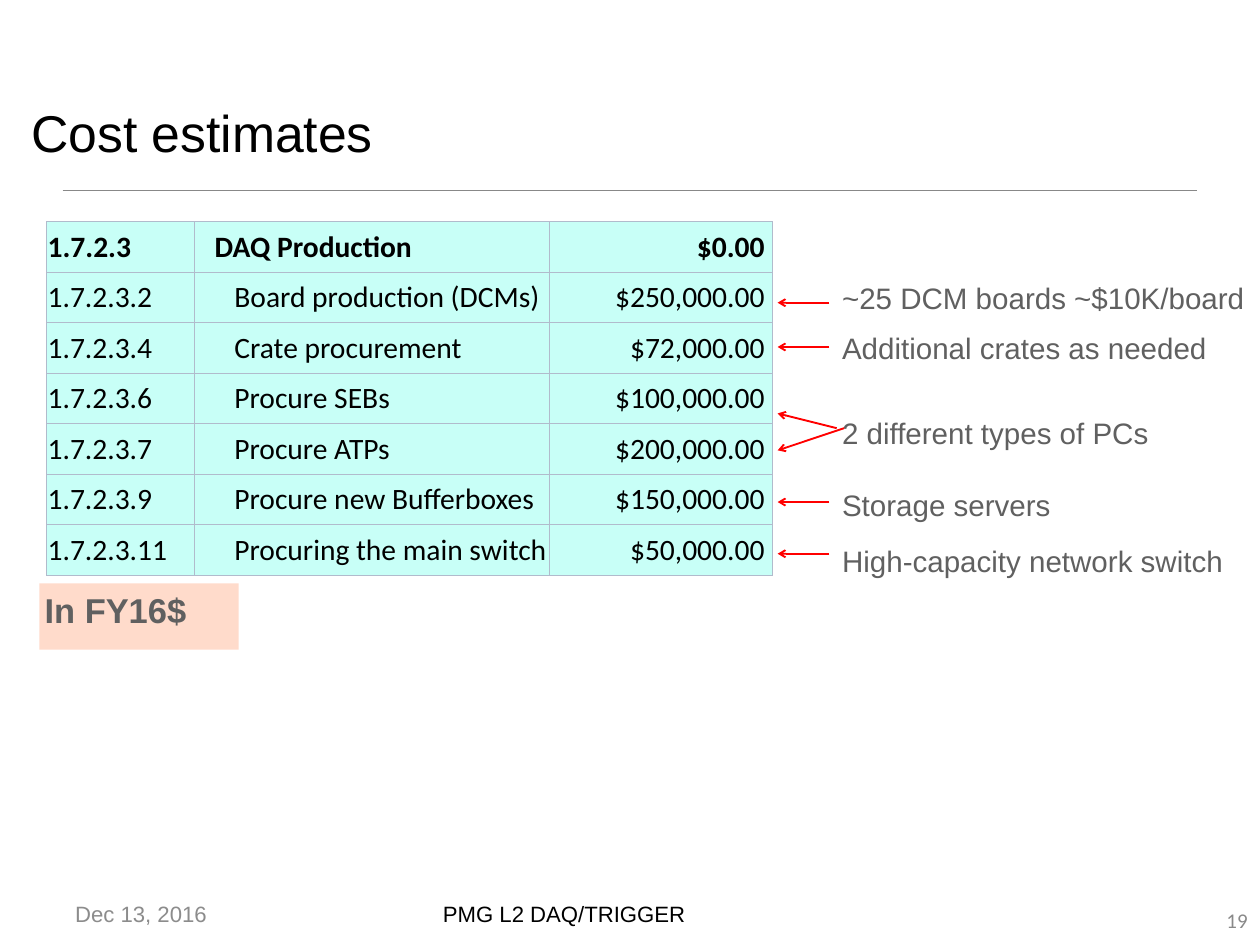
import pptx
import pptx.dml.color
import pptx.enum.shapes
import pptx.enum.text
import pptx.oxml
import pptx.oxml.ns
import pptx.util
from lxml import etree

Pt = pptx.util.Pt
ALIGN = pptx.enum.text.PP_ALIGN
ANCHOR = pptx.enum.text.MSO_ANCHOR
GREY = "606060"
BLACK = "000000"

COST_ROWS = [
    ("1.7.2.3", "DAQ Production", "$0.00"),
    ("1.7.2.3.2", "Board production (DCMs)", "$250,000.00"),
    ("1.7.2.3.4", "Crate procurement", "$72,000.00"),
    ("1.7.2.3.6", "Procure SEBs", "$100,000.00"),
    ("1.7.2.3.7", "Procure ATPs", "$200,000.00"),
    ("1.7.2.3.9", "Procure new Bufferboxes", "$150,000.00"),
    ("1.7.2.3.11", "Procuring the main switch", "$50,000.00"),
]
COLUMN_WIDTHS = [119.5, 288.7, 181.4]
ROW_HEIGHT = 41.1

# Each remark with the space before it
REMARKS = [
    ("~25 DCM boards ~$10K/board", 4),
    ("Additional crates as needed", 10),
    ("2 different types of PCs", 39),
    ("Storage servers", 28),
    ("High-capacity network switch", 16),
]

# Arrow start x, start y and end y; all end beside the table
ARROW_END_X = 632
ARROWS = [
    (680, 348, 336),
    (686, 348, 366),
    (674, 408, 408),
    (674, 450, 450),
    (674, 282, 282),
    (674, 246, 246),
]


def color(hex_value):
    return pptx.dml.color.RGBColor.from_string(hex_value)


def add_xml(parent, tag, **attributes):
    element = etree.SubElement(parent, pptx.oxml.ns.qn(tag))
    for name, value in attributes.items():
        element.set(name, value)
    return element


def place(shape, left, top, width, height):
    shape.left, shape.top = Pt(left), Pt(top)
    shape.width, shape.height = Pt(width), Pt(height)


def set_frame(text_frame, margin_x, margin_y, anchor=ANCHOR.TOP):
    text_frame.word_wrap = True
    text_frame.auto_size = pptx.enum.text.MSO_AUTO_SIZE.NONE
    text_frame.vertical_anchor = anchor
    text_frame.margin_left = text_frame.margin_right = Pt(margin_x)
    text_frame.margin_top = text_frame.margin_bottom = Pt(margin_y)


def format_paragraph(paragraph, size, hex_value, font="Arial", bold=False, align=ALIGN.LEFT):
    paragraph.alignment = align
    for run in paragraph.runs:
        run.font.name = font
        run.font.size = Pt(size)
        run.font.bold = bold
        run.font.color.rgb = color(hex_value)


def add_title(slide, text):
    title = slide.shapes.title
    place(title, 21, 35, 952, 102)
    set_frame(title.text_frame, 4.3, 4.3, ANCHOR.BOTTOM)
    title.text_frame.text = text
    format_paragraph(title.text_frame.paragraphs[0], 42, BLACK)


def add_line(slide, start, end, hex_value, width, arrow=False):
    line = slide.shapes.add_connector(
        pptx.enum.shapes.MSO_CONNECTOR.STRAIGHT, *(Pt(value) for value in start + end))
    line.line.color.rgb = color(hex_value)
    line.line.width = Pt(width)
    if arrow:
        add_xml(line.line._get_or_add_ln(), "a:tailEnd", type="arrow")
    add_xml(line._element.spPr, "a:effectLst")


def add_footer(slide, text, left, width, size, hex_value, **text_format):
    anchor = text_format.pop("anchor", ANCHOR.TOP)
    box = slide.shapes.add_textbox(Pt(left), Pt(727), Pt(width), Pt(41))
    set_frame(box.text_frame, 10, 5, anchor)
    box.text_frame.text = text
    format_paragraph(box.text_frame.paragraphs[0], size, hex_value, **text_format)


def set_borders(cell, hex_value, width):
    properties = cell._tc.get_or_add_tcPr()
    for position, side in enumerate(("a:lnL", "a:lnR", "a:lnT", "a:lnB")):
        border = add_xml(properties, side, w=str(Pt(width)))
        add_xml(add_xml(border, "a:solidFill"), "a:srgbClr", val=hex_value)
        properties.insert(position, border)


def add_cost_table(slide):
    frame = slide.shapes.add_table(
        len(COST_ROWS), len(COLUMN_WIDTHS), Pt(38), Pt(180),
        Pt(sum(COLUMN_WIDTHS)), Pt(ROW_HEIGHT * len(COST_ROWS)))
    table = frame.table
    table.first_row = table.horz_banding = False
    for column, width in zip(table.columns, COLUMN_WIDTHS):
        column.width = Pt(width)
    for row_index, texts in enumerate(COST_ROWS):
        table.rows[row_index].height = Pt(ROW_HEIGHT)
        heading = row_index == 0
        for column_index, text in enumerate(texts):
            cell = table.cell(row_index, column_index)
            cell.fill.solid()
            cell.fill.fore_color.rgb = color("C8FFF7")
            set_borders(cell, "B1BBCC", 0.5)
            cell.vertical_anchor = ANCHOR.MIDDLE
            cell.margin_left = Pt((17 if heading else 33) if column_index == 1 else 0.7)
            cell.margin_right = Pt(6.2 if column_index == 2 else 0.7)
            cell.margin_top, cell.margin_bottom = Pt(0.7), Pt(0)
            cell.text_frame.text = text
            format_paragraph(cell.text_frame.paragraphs[0], 24, BLACK, "Calibri", heading,
                             ALIGN.RIGHT if column_index == 2 else ALIGN.LEFT)


def add_label(slide, text):
    label = slide.shapes.add_shape(
        pptx.enum.shapes.MSO_SHAPE.RECTANGLE, Pt(32), Pt(474), Pt(162), Pt(54))
    label.shadow.inherit = False
    label.fill.solid()
    label.fill.fore_color.rgb = color("FFDBCB")
    label.line.fill.background()
    set_frame(label.text_frame, 4.3, 4.3)
    label.text_frame.text = text
    format_paragraph(label.text_frame.paragraphs[0], 28, GREY, bold=True)


def add_remarks(slide):
    body = slide.placeholders[1]
    place(body, 680, 222, 344, 318)
    set_frame(body.text_frame, 4.3, 4.3)
    body.text_frame.text = "\n".join(text for text, space in REMARKS)
    for paragraph, (text, space) in zip(body.text_frame.paragraphs, REMARKS):
        format_paragraph(paragraph, 24, GREY)
        paragraph.space_before = Pt(space)
        paragraph.line_spacing = 1.05
        properties = paragraph._p.get_or_add_pPr()
        properties.set("marL", "0")
        properties.set("indent", "0")
        add_xml(properties, "a:buNone")


def main():
    presentation = pptx.Presentation()
    presentation.slide_width, presentation.slide_height = Pt(1024), Pt(768)
    slide = presentation.slides.add_slide(presentation.slide_layouts[1])

    # Heading
    add_line(slide, (51, 155), (973, 155), "888888", 1)
    add_title(slide, "Cost estimates")

    # Costs and remarks
    add_cost_table(slide)
    add_label(slide, "In FY16$")
    add_remarks(slide)
    for start_x, start_y, end_y in ARROWS:
        add_line(slide, (start_x, start_y), (ARROW_END_X, end_y), "FF0000", 1.5, arrow=True)

    # Footer
    add_footer(slide, "Dec 13, 2016", 51, 239, 18, "8C8C8C")
    add_footer(slide, "PMG L2 DAQ/TRIGGER", 350, 324, 18, BLACK)
    add_footer(slide, "19", 785, 239, 17, "898989", font="Calibri",
               align=ALIGN.RIGHT, anchor=ANCHOR.MIDDLE)

    presentation.save("out.pptx")


if __name__ == "__main__":
    main()
